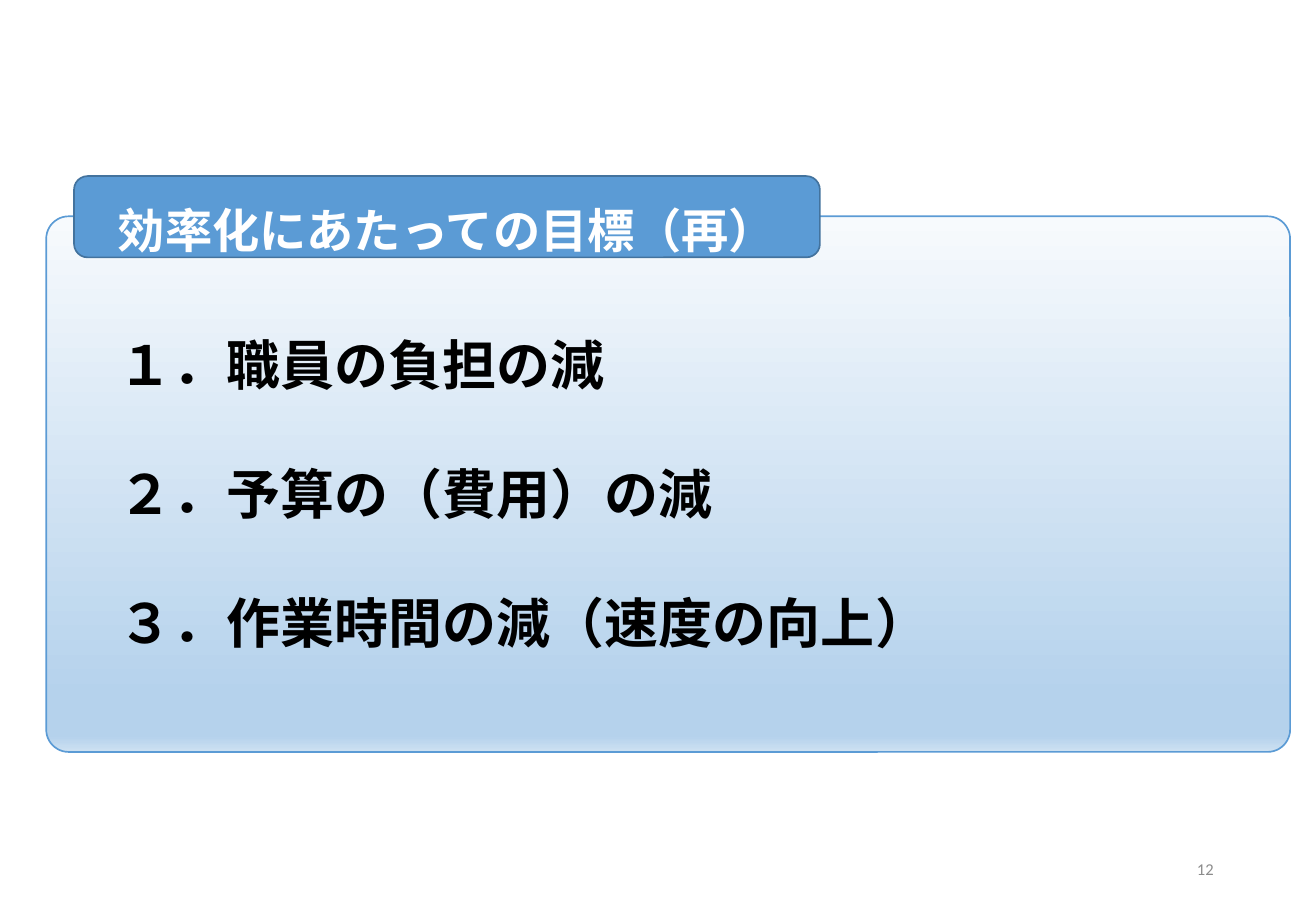
from lxml import etree
from pptx import Presentation
from pptx import util as u
from pptx.dml.color import RGBColor
from pptx.enum import shapes, text
from pptx.oxml import ns

BLUE = RGBColor(0x5B, 0x9B, 0xD5)
DARK_BLUE = RGBColor(0x43, 0x73, 0x9E)
WHITE = RGBColor(0xFF, 0xFF, 0xFF)
BLACK = RGBColor(0x00, 0x00, 0x00)
GREY = RGBColor(0x8C, 0x8C, 0x8C)
PANEL_STOPS = [
    (0, RGBColor(0xF7, 0xFA, 0xFD)),
    (90, RGBColor(0xB5, 0xD2, 0xEC)),
    (97, RGBColor(0xB5, 0xD2, 0xEC)),
    (100, RGBColor(0xCE, 0xE1, 0xF2)),
]
GOALS = ["１．職員の負担の減", "２．予算の（費用）の減", "３．作業時間の減（速度の向上）"]


def write(para, content, *, size, color, font="Noto Sans CJK JP", bold=False,
          align=text.PP_ALIGN.LEFT):
    """Add one formatted span, with the font set for Latin and East Asian text."""
    para.alignment = align
    span = para.add_run()
    span.text = content
    span.font.size = u.Pt(size)
    span.font.bold = bold
    span.font.color.rgb = color
    span.font.name = font
    latin = span.font._element.find(ns.qn("a:latin"))
    east_asian = etree.Element(ns.qn("a:ea"), typeface=font)
    latin.addnext(east_asian)


def fill_gradient(box, stops):
    """Fill from top to bottom with (percent, colour) stops."""
    box.fill.gradient()
    box.fill.gradient_angle = 270
    stop_list = box._element.spPr.find(".//" + ns.qn("a:gsLst"))
    for old_stop in list(stop_list):
        stop_list.remove(old_stop)
    for percent, color in stops:
        stop = etree.SubElement(stop_list, ns.qn("a:gs"), pos=str(percent * 1000))
        etree.SubElement(stop, ns.qn("a:srgbClr"), val=str(color))


class GoalPage:
    """Holds the shared style and the current slide."""

    line_width = 1
    goal_pitch = 76.4

    def __init__(self, deck):
        self.page = deck.slides.add_slide(deck.slide_layouts[5])

    def rounded(self, left, top, width, height, *, line, radius=0.1667):
        box = self.page.shapes.add_shape(
            shapes.MSO_SHAPE.ROUNDED_RECTANGLE,
            u.Pt(left), u.Pt(top), u.Pt(width), u.Pt(height))
        box.adjustments[0] = radius
        box.shadow.inherit = False
        box.line.color.rgb = line
        box.line.width = u.Pt(self.line_width)
        return box

    def panel(self, left, top, width, height, goals):
        box = self.rounded(left, top, width, height, line=BLUE, radius=0.042)
        fill_gradient(box, PANEL_STOPS)
        frame = box.text_frame
        frame.word_wrap = True
        frame.vertical_anchor = text.MSO_ANCHOR.TOP
        frame.margin_left = u.Pt(39.2)
        frame.margin_top = u.Pt(64.4)
        for index, goal in enumerate(goals):
            para = frame.add_paragraph() if index else frame.paragraphs[0]
            para.line_spacing = para.space_after = u.Pt(self.goal_pitch / 2)
            write(para, goal, size=32, color=BLACK, bold=True)

    def tab(self, left, top, width, height):
        box = self.rounded(left, top, width, height, line=DARK_BLUE)
        box.fill.solid()
        box.fill.fore_color.rgb = BLUE

    def title(self, left, top, width, height, content):
        """Place the title above everything drawn so far."""
        box = self.page.shapes.title
        box.left, box.top, box.width, box.height = map(u.Pt, (left, top, width, height))
        box._element.getparent().append(box._element)
        frame = box.text_frame
        frame.auto_size = text.MSO_AUTO_SIZE.NONE
        frame.vertical_anchor = text.MSO_ANCHOR.MIDDLE
        write(frame.paragraphs[0], content, size=28, color=WHITE, bold=True,
              align=text.PP_ALIGN.CENTER)

    def page_number(self, left, top, width, height, number):
        box = self.page.shapes.add_textbox(
            u.Pt(left), u.Pt(top), u.Pt(width), u.Pt(height))
        frame = box.text_frame
        frame.word_wrap = True
        frame.vertical_anchor = text.MSO_ANCHOR.MIDDLE
        write(frame.paragraphs[0], number, size=9.8, color=GREY, font="Calibri",
              align=text.PP_ALIGN.RIGHT)


def main():
    deck = Presentation()
    deck.slide_width, deck.slide_height = u.Pt(780), u.Pt(540)
    goal_page = GoalPage(deck)
    goal_page.panel(27.4, 128.2, 737.3, 317.5, GOALS)
    goal_page.page_number(550.8, 500.4, 175.7, 28.8, "12")
    goal_page.tab(43.9, 104.4, 442.1, 48.2)
    goal_page.title(43.9, 112, 442.1, 48, "効率化にあたっての目標（再）")
    deck.save("out.pptx")


if __name__ == "__main__":
    main()
